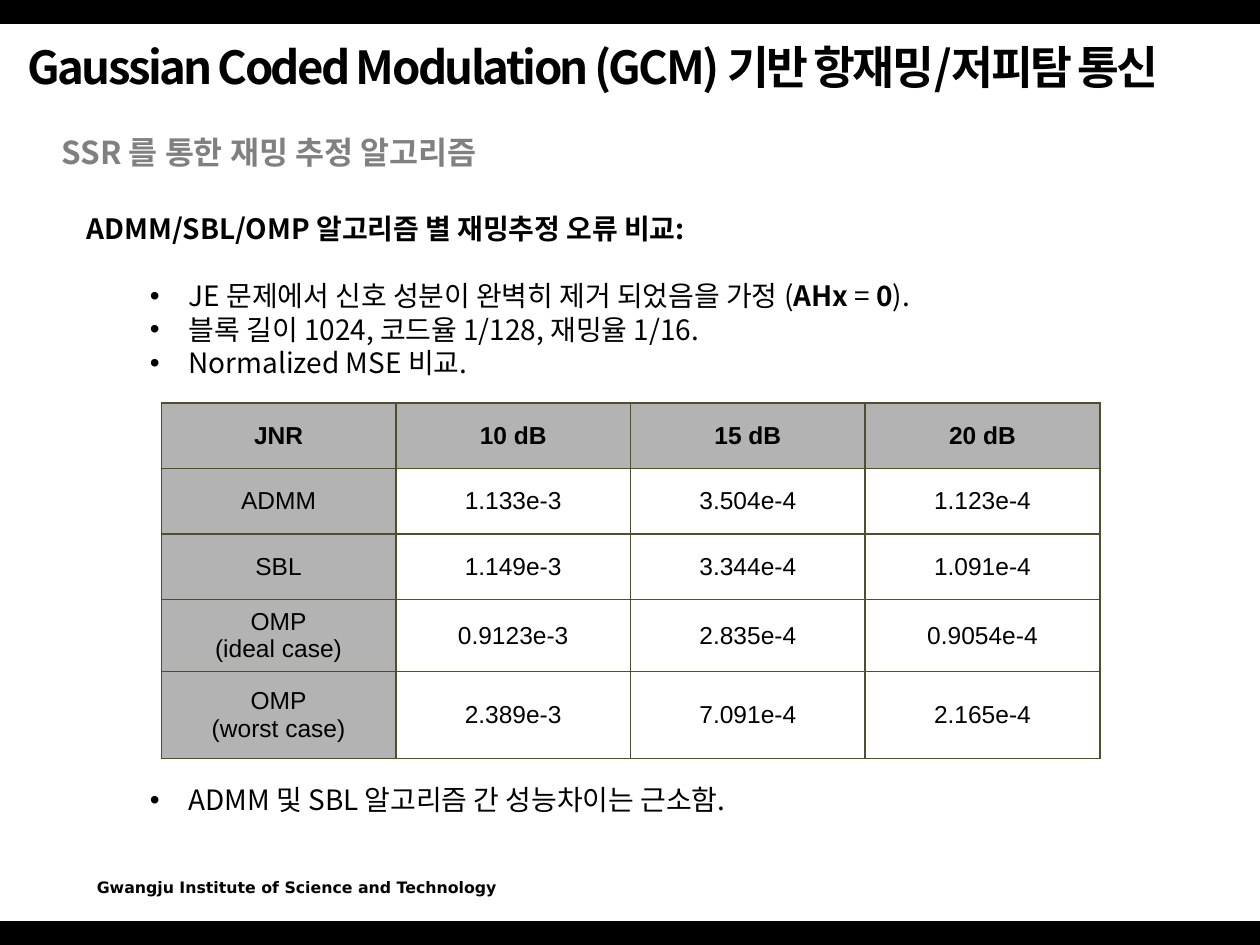
from dataclasses import dataclass

from pptx import Presentation
from pptx.dml.color import RGBColor
from pptx.enum.shapes import MSO_SHAPE
from pptx.enum.text import MSO_ANCHOR, MSO_AUTO_SIZE, PP_ALIGN
from pptx.oxml.ns import qn
from pptx.util import Inches, Pt
from lxml import etree

RECT = MSO_SHAPE.RECTANGLE
MIDDLE = MSO_ANCHOR.MIDDLE
CENTER = PP_ALIGN.CENTER
GROW = MSO_AUTO_SIZE.SHAPE_TO_FIT_TEXT
WIDE, HIGH = 10, 7.5
BAR = 0.19
LEAD = 1.2  # line pitch as a share of the text size
KR, JP = "Noto Sans CJK KR", "Noto Sans CJK JP"
HUES = {"ink": "000000", "mute": "808080", "head": "B3B3B3",
        "cell": "FFFFFF", "rule": "524C31"}


@dataclass
class Line:
    runs: list[tuple[str, bool]]
    size: float
    face: str
    hue: str = "ink"
    lead: float | None = LEAD
    gap: float = 0  # space before, in lines
    bullet: bool = False
    track: int = 0


@dataclass
class Box:
    left: float
    top: float
    width: float
    height: float
    lines: list[Line]
    wrap: bool = True


def tint(name: str) -> RGBColor:
    return RGBColor.from_string(HUES[name])


def style(para, line: Line) -> None:
    pitch = line.size * (line.lead or 1)
    if line.lead:
        para.line_spacing = Pt(pitch)
    if line.gap:
        para.space_before = Pt(pitch * line.gap)
    if line.bullet:
        para.level = 1
        props = para._p.get_or_add_pPr()
        props.set("marL", str(Inches(0.81)))
        props.set("indent", str(Inches(-0.31)))
        etree.SubElement(props, qn("a:buFont")).set("typeface", "Arial")
        etree.SubElement(props, qn("a:buChar")).set("char", "•")
    font = para.font
    font.size, font.name = Pt(line.size), line.face
    font.color.rgb = tint(line.hue)
    etree.SubElement(font._element, qn("a:ea")).set("typeface", line.face)
    if line.track:
        font._element.set("spc", str(line.track))
    bolds = {bold for _, bold in line.runs}
    if len(bolds) == 1:
        font.bold = bolds.pop()
    for text, bold in line.runs:
        run = para.add_run()
        run.text = text
        if bolds and len(bolds) > 1:
            run.font.bold = bold


def write(slide, box: Box) -> None:
    area = [Inches(n) for n in (box.left, box.top, box.width, box.height)]
    frame = slide.shapes.add_textbox(*area).text_frame
    frame.word_wrap, frame.auto_size = box.wrap, GROW
    for num, line in enumerate(box.lines):
        style(frame.add_paragraph() if num else frame.paragraphs[0], line)


def add_bar(slide, top: float) -> None:
    bar = slide.shapes.add_shape(RECT, 0, Inches(top), Inches(WIDE), Inches(BAR))
    bar.shadow.inherit = False
    bar.fill.solid()
    bar.fill.fore_color.rgb = tint("ink")
    bar.line.fill.background()


def edge(cell) -> None:
    props = cell._tc.get_or_add_tcPr()
    for num, side in enumerate(("lnL", "lnR", "lnT", "lnB")):
        rule = etree.Element(qn(f"a:{side}"), w=str(Pt(1)))
        fill = etree.SubElement(rule, qn("a:solidFill"))
        etree.SubElement(fill, qn("a:srgbClr")).set("val", HUES["rule"])
        props.insert(num, rule)


def add_grid(slide, rows: list[list[str]], heights: list[float]) -> None:
    table = slide.shapes.add_table(
        len(rows), len(rows[0]), Inches(1.28), Inches(3.2),
        Inches(7.45), Inches(sum(heights))).table
    for row, high in zip(table.rows, heights):
        row.height = Inches(high)
    for r, row in enumerate(rows):
        for c, text in enumerate(row):
            cell = table.cell(r, c)
            cell.fill.solid()
            cell.fill.fore_color.rgb = tint("cell" if r and c else "head")
            edge(cell)
            cell.vertical_anchor = MIDDLE
            cell.margin_left = cell.margin_right = Inches(0.09)
            cell.margin_top = cell.margin_bottom = Inches(0.05)
            cell.text = text
            for para in cell.text_frame.paragraphs:
                para.alignment = CENTER
                font = para.font
                font.size, font.name, font.bold = Pt(14), "Arial", r == 0
                font.color.rgb = tint("ink")


def point(*runs: tuple[str, bool], gap: float = 0) -> Line:
    return Line(list(runs), 16, JP, gap=gap, bullet=True)


BOXES = [
    # Footer
    Box(0.67, 6.92, 3.46, 0.25,
        [Line([("Gwangju Institute of Science and Technology", True)], 9,
              "DejaVu Sans", lead=None)], wrap=False),
    # Title and subtitle
    Box(0.12, 0.26, 9.76, 0.54,
        [Line([("Gaussian Coded Modulation (GCM) 기반 항재밍/저피탐 통신", True)],
              26, KR, track=-150)]),
    Box(0.39, 1.01, 5.4, 0.4,
        [Line([("SSR 를 통한 재밍 추정 알고리즘", True)], 18, KR, "mute")]),
    # Body: the last point sits below the table
    Box(0.59, 1.63, 8.21, 4.95, [
        Line([("ADMM/SBL/OMP 알고리즘 별 재밍추정 오류 비교:", True)], 16, JP),
        point(("JE 문제에서 신호 성분이 완벽히 제거 되었음을 가정 (", False),
              ("AHx ", True), ("= ", False), ("0", True), (").", False), gap=1),
        point(("블록 길이 1024, 코드율 1/128, 재밍율 1/16.", False)),
        point(("Normalized MSE 비교.", False)),
        point(("ADMM 및 SBL 알고리즘 간 성능차이는 근소함.", False), gap=12),
    ]),
]
ROWS = [
    ["JNR", "10 dB", "15 dB", "20 dB"],
    ["ADMM", "1.133e-3", "3.504e-4", "1.123e-4"],
    ["SBL", "1.149e-3", "3.344e-4", "1.091e-4"],
    ["OMP\n(ideal case)", "0.9123e-3", "2.835e-4", "0.9054e-4"],
    ["OMP\n(worst case)", "2.389e-3", "7.091e-4", "2.165e-4"],
]


def main() -> None:
    deck = Presentation()
    deck.slide_width, deck.slide_height = Inches(WIDE), Inches(HIGH)
    slide = deck.slides.add_slide(deck.slide_layouts[6])
    for top in (0, HIGH - BAR):
        add_bar(slide, top)
    for box in BOXES:
        write(slide, box)
    add_grid(slide, ROWS, [0.52] * 3 + [0.57, 0.69])
    deck.save("out.pptx")


if __name__ == "__main__":
    main()
